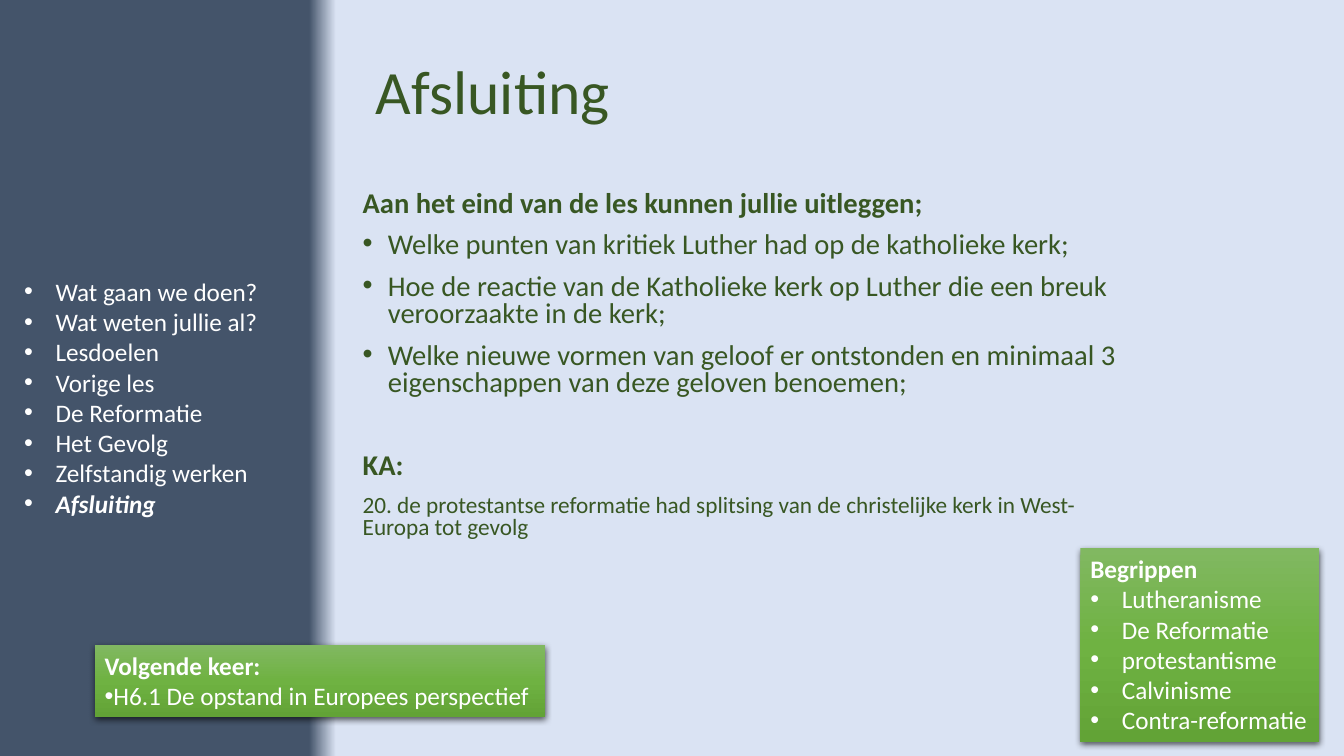
from copy import deepcopy
from lxml import etree
from pptx import Presentation
from pptx.dml.color import RGBColor
from pptx.enum import shapes, text
from pptx.oxml import ns
from pptx.util import Pt

HUES = {"navy": "44546A", "pale": "DAE3F3", "leaf": "385723", "white": "FFFFFF",
        "top": "81B861", "mid": "6FB242", "low": "62A336", "black": "000000"}
TITLE = "Afsluiting"
MENU = ["Wat gaan we doen?", "Wat weten jullie al?", "Lesdoelen", "Vorige les",
        "De Reformatie", "Het Gevolg", "Zelfstandig werken"]
HEAD = "Aan het eind van de les kunnen jullie uitleggen;"
GOALS = ["Welke punten van kritiek Luther had op de katholieke kerk;",
         "Hoe de reactie van de Katholieke kerk op Luther die een breuk veroorzaakte in de kerk;",
         "Welke nieuwe vormen van geloof er ontstonden en minimaal 3 eigenschappen van deze geloven benoemen;"]
ASPECT = ("20. de protestantse reformatie had splitsing van de christelijke kerk "
          "in West-Europa tot gevolg")
NEXT = ("Volgende keer:", ["H6.1 De opstand in Europees perspectief"])
TERMS = ("Begrippen", ["Lutheranisme", "De Reformatie", "protestantisme",
                       "Calvinisme", "Contra-reformatie"])

deck = Presentation()
deck.slide_width, deck.slide_height = Pt(960), Pt(540)
slide = deck.slides.add_slide(deck.slide_layouts[6])


def rgb(hue):
    return RGBColor.from_string(HUES[hue])


def blend(fill, root, stops, angle):
    fill.gradient()
    fill.gradient_angle = angle
    marks = root.findall(".//" + ns.qn("a:gs"))
    for _ in stops[len(marks):]:
        marks[-1].addnext(deepcopy(marks[-1]))
    for stop, (place, hue) in zip(fill.gradient_stops, stops):
        stop.position = place
        stop.color.rgb = rgb(hue)


def write(frame, words, size=18, hue="white", bold=False, italic=False,
          lines=None, before=0, bullet=False, indent=0):
    para = frame.paragraphs[0]
    if para.runs:
        para = frame.add_paragraph()
    para.alignment = text.PP_ALIGN.LEFT
    para.space_before = Pt(before)
    if lines:
        para.line_spacing = lines
    run = para.add_run()
    run.text = words
    font = run.font
    font.name, font.size, font.bold, font.italic = "Calibri", Pt(size), bold, italic
    font.color.rgb = rgb(hue)
    if bullet:
        props = para._p.get_or_add_pPr()
        props.set("marL", str(Pt(indent)))
        props.set("indent", str(-Pt(indent)))
        etree.SubElement(props, ns.qn("a:buFont"), typeface="Arial")
        etree.SubElement(props, ns.qn("a:buChar"), char="•")


def hold(shape, wrap):
    frame = shape.text_frame
    frame.word_wrap = wrap
    frame.auto_size = text.MSO_AUTO_SIZE.NONE if wrap else text.MSO_AUTO_SIZE.SHAPE_TO_FIT_TEXT
    frame.vertical_anchor = text.MSO_ANCHOR.TOP
    return frame


def box(place, wrap=True):
    return hold(slide.shapes.add_textbox(*map(Pt, place)), wrap)


def card(place, head, items, indent):
    shape = slide.shapes.add_shape(shapes.MSO_SHAPE.RECTANGLE, *map(Pt, place))
    blend(shape.fill, shape._element.spPr, [(0, "top"), (0.5, "mid"), (1, "low")], 270)
    shape.line.fill.background()
    shape.shadow.inherit = False
    effects = shape._element.spPr.find(ns.qn("a:effectLst"))
    shade = etree.SubElement(effects, ns.qn("a:outerShdw"), blurRad=str(Pt(4.5)),
                             dist=str(Pt(1.5)), dir="5400000", algn="ctr", rotWithShape="0")
    tone = etree.SubElement(shade, ns.qn("a:srgbClr"), val=HUES["black"])
    etree.SubElement(tone, ns.qn("a:alpha"), val="63000")
    frame = hold(shape, False)
    write(frame, head, bold=True)
    for item in items:
        write(frame, item, bullet=True, indent=indent)


blend(slide.background.fill, slide._element, [(0.23, "navy"), (0.25, "pale")], 0)

title = box((261.4, 15.1, 662.4, 104.4))
title.vertical_anchor = text.MSO_ANCHOR.MIDDLE
write(title, TITLE, size=44, hue="leaf", lines=0.9)

card((67.7, 460.8, 321.8, 51.1), *NEXT, indent=0)

menu = box((10.1, 193.7, 183.6, 181.4), wrap=False)
for item in MENU:
    write(menu, item, bullet=True, indent=22.5)
write(menu, TITLE, bold=True, italic=True, bullet=True, indent=22.5)

body = box((252, 133.2, 568.8, 258.5))
style = dict(hue="leaf", lines=0.8, before=10)
write(body, HEAD, size=20.4, bold=True, **style)
for goal in GOALS:
    write(body, goal, size=20.4, bullet=True, indent=18, **style)
write(body, "KA:", size=20.4, bold=True, **{**style, "before": 40})
write(body, ASPECT, size=16.6, **style)

card((771.8, 391.7, 170.6, 138.2), *TERMS, indent=22.5)

deck.save("out.pptx")
